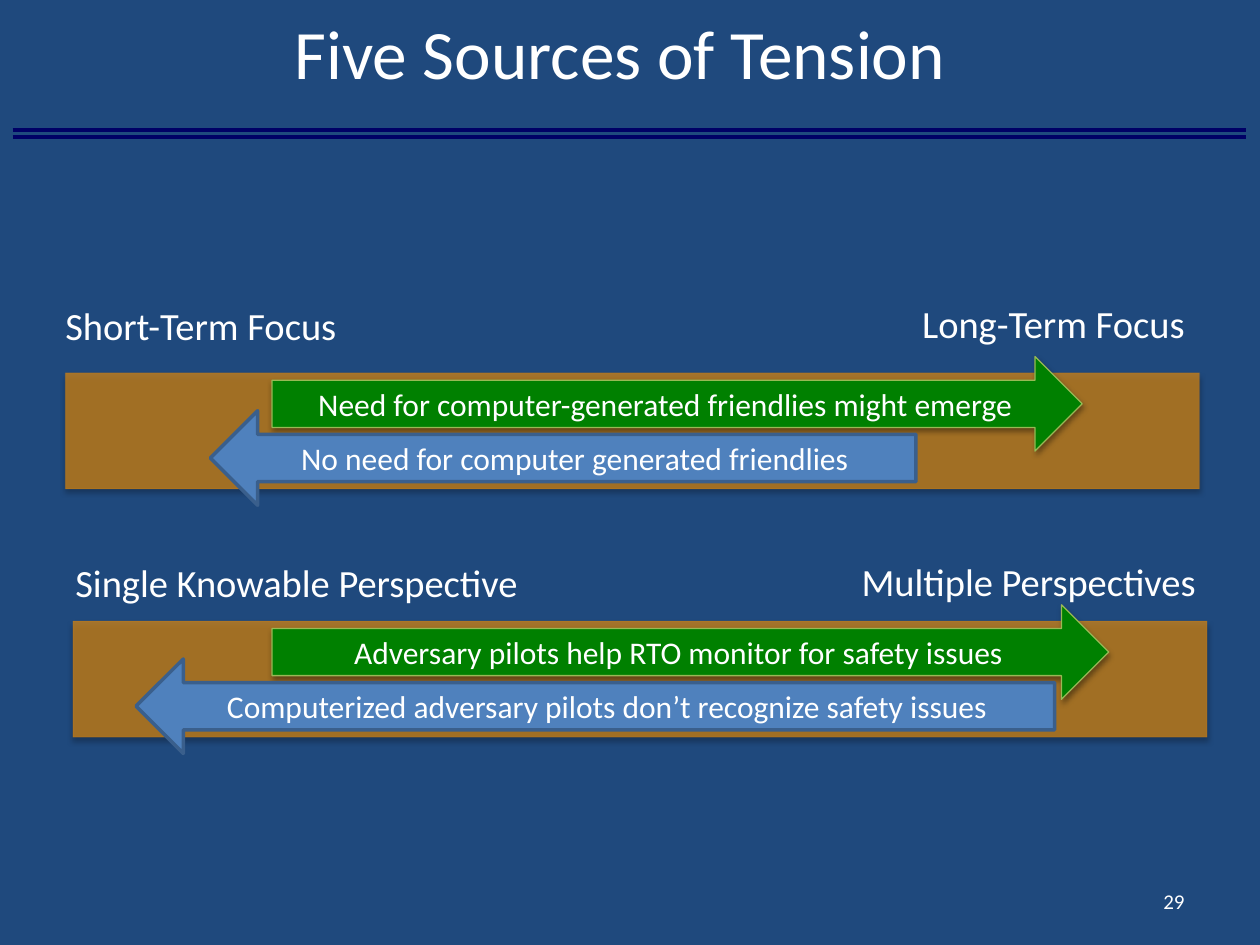
import dataclasses

import lxml.etree
import pptx
import pptx.dml.color
import pptx.enum.shapes
import pptx.enum.text
import pptx.oxml.ns
import pptx.util

Inches = pptx.util.Inches
Pt = pptx.util.Pt
qn = pptx.oxml.ns.qn
Align = pptx.enum.text.PP_ALIGN
Anchor = pptx.enum.text.MSO_ANCHOR
Preset = pptx.enum.shapes.MSO_SHAPE


@dataclasses.dataclass(frozen=True)
class Theme:
    font: str = "Calibri"
    background: str = "1F497D"
    text: str = "FFFFFF"
    rule: str = "000066"
    band: str = "D7850F"
    forward: str = "008000"
    forward_line: str = "98B955"
    back: str = "4F81BD"
    back_line: str = "3A5F8C"
    title_size: float = 39.6
    label_size: float = 22
    arrow_size: float = 18
    number_size: float = 12


THEME = Theme()

# Every tension is one row: a band with two arrows and two end labels
FIRST_ROW, ROW_PITCH = 2.96, 1.97
BAND_W, BAND_H = 9, 0.92
ARROW_H, FORWARD_DY, BACK_DY = 0.75, -0.13, 0.3
LABEL_H = 0.47

# Labels: (text, left, width, offset from band top); arrows: (text, left, width)
TENSIONS = [
    dict(
        band_left=0.52,
        labels=[("Short-Term Focus", 0.42, 4, -0.61),
                ("Long-Term Focus", 7.22, 3.28, -0.63)],
        forward=("Need for computer-generated friendlies might emerge", 2.16, 6.43),
        back=("No need for computer generated friendlies", 1.67, 5.6),
    ),
    dict(
        band_left=0.58,
        labels=[("Single Knowable Perspective", 0.5, 4.75, -0.54),
                ("Multiple Perspectives", 6.74, 3.28, -0.55)],
        forward=("Adversary pilots help RTO monitor for safety issues", 2.16, 6.64),
        back=("Computerized adversary pilots don’t recognize safety issues", 1.08, 7.29),
    ),
]


def rgb(value):
    return pptx.dml.color.RGBColor.from_string(value)


def box(*lengths):
    return [Inches(n) for n in lengths]


def write(shape, text, size, align=Align.LEFT, anchor=Anchor.MIDDLE):
    tf = shape.text_frame
    tf.word_wrap = True
    tf.vertical_anchor = anchor
    p = tf.paragraphs[0]
    p.alignment = align
    r = p.add_run()
    r.text = text
    r.font.name = THEME.font
    r.font.size = Pt(size)
    r.font.color.rgb = rgb(THEME.text)


def set_alpha(fill_parent, percent):
    color = fill_parent.find(qn("a:solidFill"))[0]
    lxml.etree.SubElement(color, qn("a:alpha"), val=str(percent * 1000))


def add_shadow(sp, percent, distance):
    effects = sp._element.spPr.find(qn("a:effectLst"))
    shadow = lxml.etree.SubElement(
        effects, qn("a:outerShdw"), blurRad=str(Pt(3.1)),
        dist=str(Pt(distance)), dir="5400000", rotWithShape="0")
    color = lxml.etree.SubElement(shadow, qn("a:srgbClr"), val="000000")
    lxml.etree.SubElement(color, qn("a:alpha"), val=str(percent * 1000))


def add_block(s, preset, at, fill, line, line_width):
    sp = s.shapes.add_shape(preset, *box(*at))
    sp.shadow.inherit = False
    sp.fill.solid()
    sp.fill.fore_color.rgb = rgb(fill)
    sp.line.color.rgb = rgb(line)
    sp.line.width = Pt(line_width)
    return sp


def add_band(s, left, top):
    sp = add_block(s, Preset.RECTANGLE, (left, top, BAND_W, BAND_H),
                   THEME.band, THEME.band, 0.75)
    spPr = sp._element.spPr
    set_alpha(spPr, 72)
    set_alpha(spPr.find(qn("a:ln")), 21)
    add_shadow(sp, 35, 1.8)


def add_arrow(s, arrow, top, fill, line, line_width):
    text, left, width = arrow
    sp = add_block(s, Preset.RIGHT_ARROW, (left, top, width, ARROW_H),
                   fill, line, line_width)
    write(sp, text, THEME.arrow_size, Align.CENTER)
    return sp


def add_text(s, text, at, size, align=Align.LEFT, anchor=Anchor.TOP):
    sp = s.shapes.add_textbox(*box(*at))
    write(sp, text, size, align, anchor)
    return sp


def add_tension(s, tension, top):
    for text, left, width, dy in tension["labels"]:
        label = add_text(s, text, (left, top + dy, width, LABEL_H), THEME.label_size)
        label.text_frame.auto_size = pptx.enum.text.MSO_AUTO_SIZE.SHAPE_TO_FIT_TEXT
    add_band(s, tension["band_left"], top)
    forward = add_arrow(s, tension["forward"], top + FORWARD_DY,
                        THEME.forward, THEME.forward_line, 0.75)
    add_shadow(forward, 38, 1.6)
    back = add_arrow(s, tension["back"], top + BACK_DY,
                     THEME.back, THEME.back_line, 2)
    back._element.spPr.find(qn("a:xfrm")).set("flipH", "1")


def add_double_rule(s):
    group = s.shapes.add_group_shape()
    for y in (1.03, 1.09):
        rule = group.shapes.add_connector(
            pptx.enum.shapes.MSO_CONNECTOR.STRAIGHT, *box(0.1, y, 9.89, y))
        rule.line.color.rgb = rgb(THEME.rule)
        rule.line.width = Pt(2.25)
        lxml.etree.SubElement(rule._element.spPr, qn("a:effectLst"))


def add_title(s, text):
    title = s.shapes.title
    title.left, title.top, title.width, title.height = box(0.42, 0, 9, 0.82)
    write(title, text, THEME.title_size, Align.CENTER)


def main():
    prs = pptx.Presentation()
    prs.slide_width, prs.slide_height = box(10, 7.5)
    s = prs.slides.add_slide(prs.slide_layouts.get_by_name("Title Only"))
    s.background.fill.solid()
    s.background.fill.fore_color.rgb = rgb(THEME.background)

    # Heading
    add_double_rule(s)
    add_title(s, "Five Sources of Tension")

    # Tensions
    for row, tension in enumerate(TENSIONS):
        add_tension(s, tension, FIRST_ROW + row * ROW_PITCH)

    # Slide number
    add_text(s, "29", (7.17, 6.95, 2.33, 0.4), THEME.number_size,
             Align.RIGHT, Anchor.MIDDLE)
    prs.save("out.pptx")


if __name__ == "__main__":
    main()
